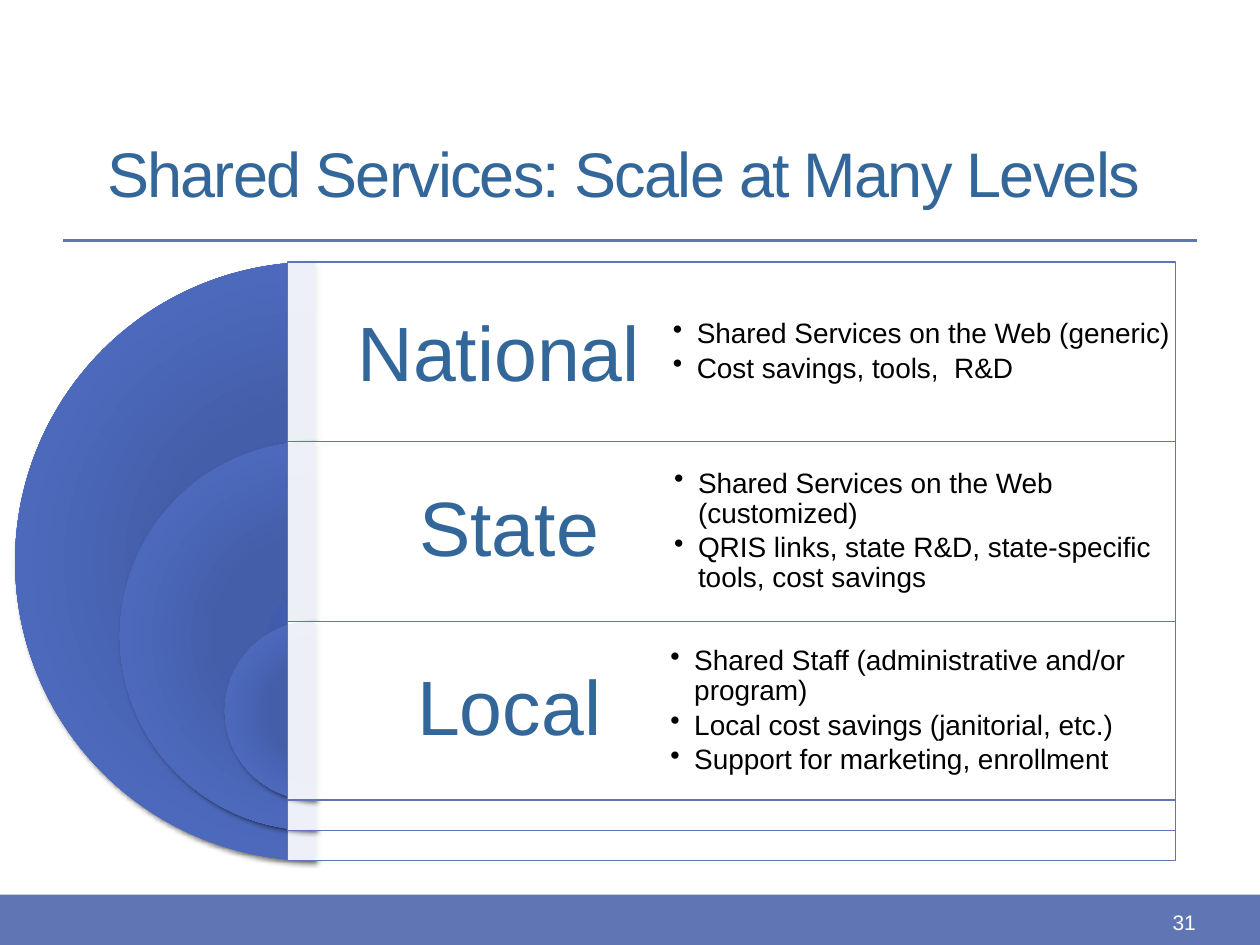
from dataclasses import dataclass

from lxml.etree import SubElement as Sub
from pptx import Presentation
from pptx.dml.color import RGBColor
from pptx.enum.shapes import MSO_CONNECTOR as Link, MSO_SHAPE as Kind
from pptx.enum.text import MSO_ANCHOR as Anchor, MSO_AUTO_SIZE as Fit, PP_ALIGN as Align
from pptx.oxml.ns import qn
from pptx.util import Inches, Pt

HUES = {
    "bar": "6076B4", "head": "336699", "ink": "000000", "paper": "FFFFFF",
    "deep": "405CAC", "dark": "445EA9", "mid": "4C69BC",
}
COLS, ROWS = 10, 7.5
TOP, SIZE, STEP, TRIM = 2.08, 4.75, 1.425, 0.24
HUB, LEFT, WIDE = 2.495, 2.28, 7.05

deck = Presentation()
deck.slide_width, deck.slide_height = Inches(10), Inches(7.5)
slide = deck.slides.add_slide(deck.slide_layouts[5])
shapes = slide.shapes


@dataclass
class Level:
    name: str
    points: list[str]
    left: float
    width: float


LEVELS = [
    Level("National", ["Shared Services on the Web (generic)",
                       "Cost savings, tools,  R&D"], 5.07, 4.8),
    Level("State", ["Shared Services on the Web (customized)",
                    "QRIS links, state R&D, state-specific tools, cost savings"], 5.08, 4.76),
    Level("Local", ["Shared Staff (administrative and/or program)",
                    "Local cost savings (janitorial, etc.)",
                    "Support for marketing, enrollment"], 5.05, 4.83),
]


def grid(x: float, y: float, w: float, h: float) -> list[int]:
    col, row = deck.slide_width / COLS, deck.slide_height / ROWS
    return [round(x * col), round(y * row), round(w * col), round(h * row)]


def rgb(hue: str) -> RGBColor:
    return RGBColor.from_string(HUES[hue])


def node(root, tag: str, **attrs):
    return Sub(root, qn(tag), {key: str(val) for key, val in attrs.items()})


def tint(root, hue: str, alpha: int = 100) -> None:
    color = node(root, "a:srgbClr", val=HUES[hue])
    if alpha < 100:
        node(color, "a:alpha", val=alpha * 1000)


def write(frame, lines: list[str], size: float, hue: str, align=Align.LEFT,
          pad: float | None = None, lead: float | None = None,
          after: float = 0, bullet: bool = False, kern: int = 0) -> None:
    frame.word_wrap = True
    frame.auto_size = Fit.NONE
    frame.vertical_anchor = Anchor.MIDDLE
    if pad is not None:
        frame.margin_left = frame.margin_right = Inches(pad)
        frame.margin_top = frame.margin_bottom = Inches(pad)
    for i, line in enumerate(lines):
        para = frame.add_paragraph() if i else frame.paragraphs[0]
        para.alignment = align
        if lead:
            para.line_spacing = lead
            para.space_after = Pt(after)
        if bullet:
            props = para._p.get_or_add_pPr()
            props.set("marL", str(Inches(0.19)))
            props.set("indent", str(-Inches(0.19)))
            node(props, "a:buChar", char="•")
        run = para.add_run()
        run.text = line
        run.font.name, run.font.size = "Arial", Pt(size)
        run.font.color.rgb = rgb(hue)
        if kern:
            run._r.get_or_add_rPr().set("spc", str(kern))


def text(spot: list[int], lines: list[str], **style):
    frame = shapes.add_textbox(*spot).text_frame
    write(frame, lines, **style)
    return frame


def block(spot: list[int], hue: str, edge: str | None = None):
    rect = shapes.add_shape(Kind.RECTANGLE, *spot)
    rect.shadow.inherit = False
    rect.fill.solid()
    rect.fill.fore_color.rgb = rgb(hue)
    if edge:
        rect.line.color.rgb = rgb(edge)
        rect.line.width = Pt(0.75)
    else:
        rect.line.fill.background()
    return rect


def half(spot: list[int]) -> None:
    pie = shapes.add_shape(Kind.PIE, *spot)
    pie.adjustments[0], pie.adjustments[1] = 54, 162
    pie.line.fill.background()
    props = pie._element.spPr
    fill = node(props, "a:gradFill", rotWithShape=1)
    stops = node(fill, "a:gsLst")
    for at, hue in [(0, "deep"), (34, "dark"), (70, "mid"), (100, "bar")]:
        tint(node(stops, "a:gs", pos=at * 1000), hue)
    way = node(fill, "a:path", path="circle")
    node(way, "a:fillToRect", **dict.fromkeys("ltrb", 100000))
    props.find(qn("a:prstGeom")).addnext(fill)
    cast = node(node(props, "a:effectLst"), "a:outerShdw", blurRad=Pt(3),
                dist=Pt(2), dir=45 * 60000, rotWithShape=0)
    tint(cast, "ink", 60)


def draw(level: Level, rank: int) -> None:
    y = TOP + rank * STEP
    tall = SIZE - rank * (STEP + TRIM)
    half(grid(HUB - tall / 2, y, tall, tall))
    panel = block(grid(LEFT, y, WIDE, tall), "paper", "bar")
    shade = panel._element.spPr.find(qn("a:solidFill"))
    node(shade[0], "a:alpha", val=90000)
    name = text(grid(LEFT, y, WIDE / 2, STEP), [level.name], size=44, hue="head",
                align=Align.CENTER, pad=0.18, lead=0.9)
    if rank == 0:
        gap = name.paragraphs[0].add_run()
        gap.text, gap.font.size = " ", Pt(53)
    text(grid(level.left, y, level.width, STEP), level.points, size=16, hue="ink",
         pad=0.27, lead=0.9, after=2.4, bullet=True)


block(grid(0, 7.1, COLS, 0.4), "bar")
x, y, w, h = grid(0.5, 1.91, 9, 0)
rule = shapes.add_connector(Link.STRAIGHT, x, y, x + w, y)
rule.line.color.rgb = rgb("bar")
rule.line.width = Pt(2.08)
node(rule._element.spPr, "a:effectLst")

title = shapes.title
title.left, title.top, title.width, title.height = grid(0.75, 0.83, 8.75, 1.08)
write(title.text_frame, ["Shared Services: Scale at Many Levels"], size=36,
      hue="head", kern=-100)

for rank, level in enumerate(LEVELS):
    draw(level, rank)

text(grid(8.42, 7.14, 1.17, 0.36), ["31"], size=12, hue="paper", align=Align.RIGHT)

deck.save("out.pptx")
